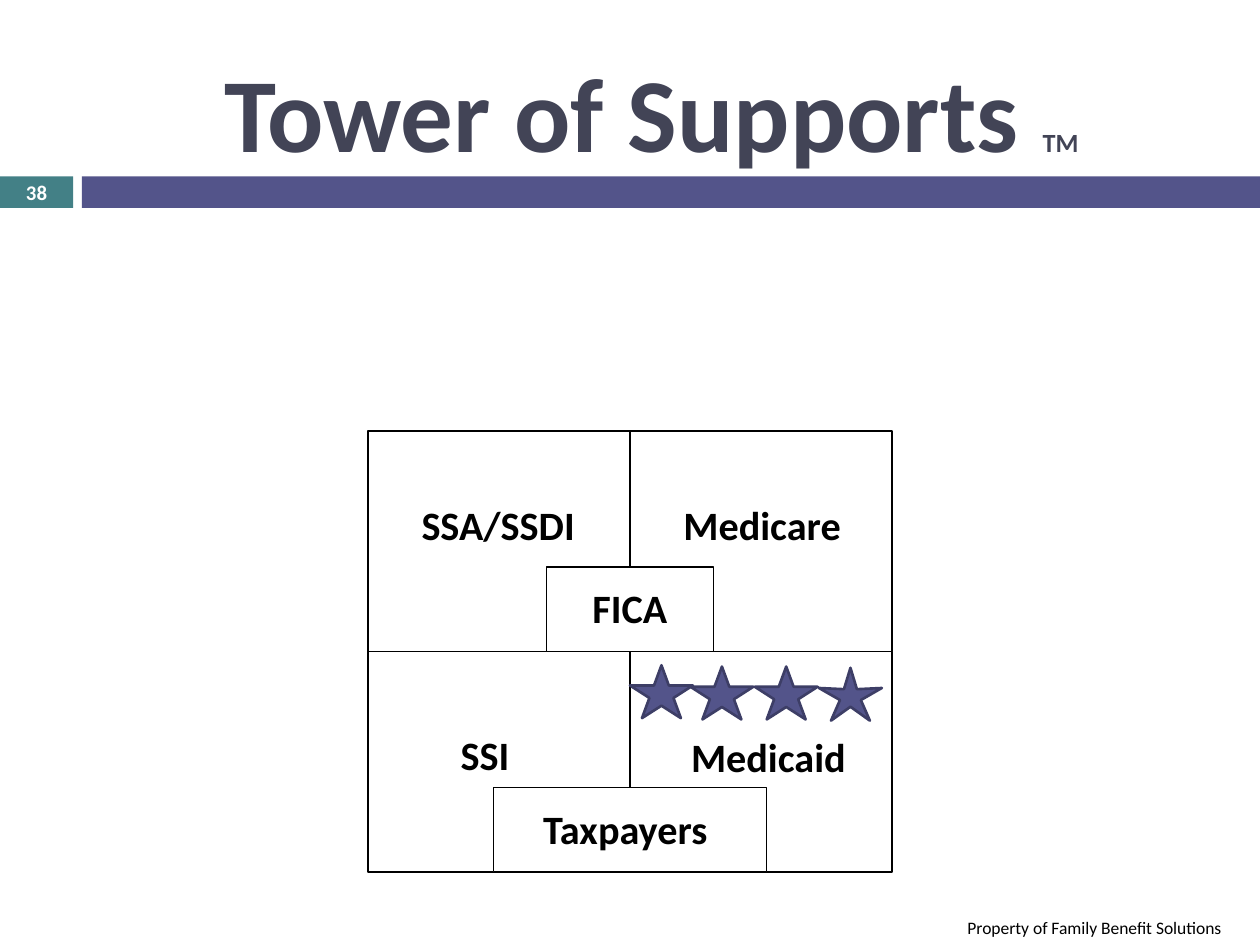
"""Build the Tower of Supports slide."""
from pptx import Presentation
from pptx.dml.color import RGBColor
from pptx.enum.shapes import MSO_SHAPE
from pptx.enum.text import MSO_ANCHOR, PP_ALIGN
from pptx.util import Inches, Pt

RECTANGLE, STAR = MSO_SHAPE.RECTANGLE, MSO_SHAPE.STAR_5_POINT
TOP, MIDDLE = MSO_ANCHOR.TOP, MSO_ANCHOR.MIDDLE
LEFT, CENTER = PP_ALIGN.LEFT, PP_ALIGN.CENTER
COLORS = {
    "teal": "438086",
    "purple": "53548A",
    "star edge": "3D3E66",
    "title": "424456",
    "black": "000000",
    "white": "FFFFFF",
}

prs = Presentation()
prs.slide_width, prs.slide_height = Inches(10), Inches(7.5)
slide = prs.slides.add_slide(prs.slide_layouts[6])


def add_figure(kind, box, fill, line=None, weight=0.75):
    figure = slide.shapes.add_shape(kind, *map(Inches, box))
    figure.shadow.inherit = False
    figure.fill.solid()
    figure.fill.fore_color.rgb = RGBColor.from_string(COLORS[fill])
    if line:
        figure.line.color.rgb = RGBColor.from_string(COLORS[line])
        figure.line.width = Pt(weight)
    else:
        figure.line.fill.background()
    return figure


def add_text(box, *runs, size=23, color="black", bold=True, align=CENTER,
             anchor=TOP, fill=None, wrap=True, inset=0.1):
    area = slide.shapes.add_textbox(*map(Inches, box))
    if fill:
        area.fill.solid()
        area.fill.fore_color.rgb = RGBColor.from_string(COLORS[fill])
    frame = area.text_frame
    frame.word_wrap = wrap
    frame.vertical_anchor = anchor
    frame.margin_left = frame.margin_right = Inches(inset)
    paragraph = frame.paragraphs[0]
    paragraph.alignment = align
    for words, run_size in runs:
        run = paragraph.add_run()
        run.text = words
        run.font.name = "Calibri"
        run.font.size = Pt(run_size or size)
        run.font.bold = bold
        run.font.color.rgb = RGBColor.from_string(COLORS[color])


add_figure(RECTANGLE, (0, 1.4, 0.58, 0.25), "teal")
add_figure(RECTANGLE, (0.65, 1.4, 9.35, 0.25), "purple")
add_text((0, 1.39, 0.58, 0.27), ("38", 11.9), color="white", anchor=MIDDLE, inset=0)

room_width, room_height = 2.08, 1.75
for row in range(2):
    for column in range(2):
        room = (2.92 + column * room_width, 3.42 + row * room_height,
                room_width, room_height)
        add_figure(RECTANGLE, room, "white", "black")

for benefit, left, top, width, wrap in [
    ("SSA/SSDI", 3.08, 3.92, 1.75, True),
    ("Medicare", 5.25, 3.92, 1.6, False),
    ("SSI", 3.49, 5.75, 0.72, False),
    ("Medicaid", 5.31, 5.76, 1.58, False),
]:
    add_text((left, top, width, 0.49), (benefit, None), fill="white", wrap=wrap)

for funder, door_width, label_width, top in [
    ("FICA", 1.33, 1.5, 4.5),
    ("Taxpayers ", 2.17, 2.17, 6.25),
]:
    add_figure(RECTANGLE, (5 - door_width / 2, top, door_width, 0.67), "white", "black")
    add_text((5 - label_width / 2, top + 0.08, label_width, 0.49), (funder, None))

add_text((0.67, 0.25, 9, 1.25), ("Tower of Supports ", 60), ("TM", 15),
         color="title", anchor=MIDDLE)
add_text((7.58, 7.23, 2.42, 0.27), ("Property of Family Benefit Solutions", 10),
         bold=False, align=LEFT)

for left, top, point_depth in [
    (6.5, 5.3, 0.166),
    (5.48, 5.29, 0.191),
    (5.99, 5.29, 0.191),
    (5, 5.28, 0.191),
]:
    star = add_figure(STAR, (left, top, 0.5, 0.42), "purple", "star edge", 1.5)
    star.adjustments[0] = point_depth

prs.save("out.pptx")
